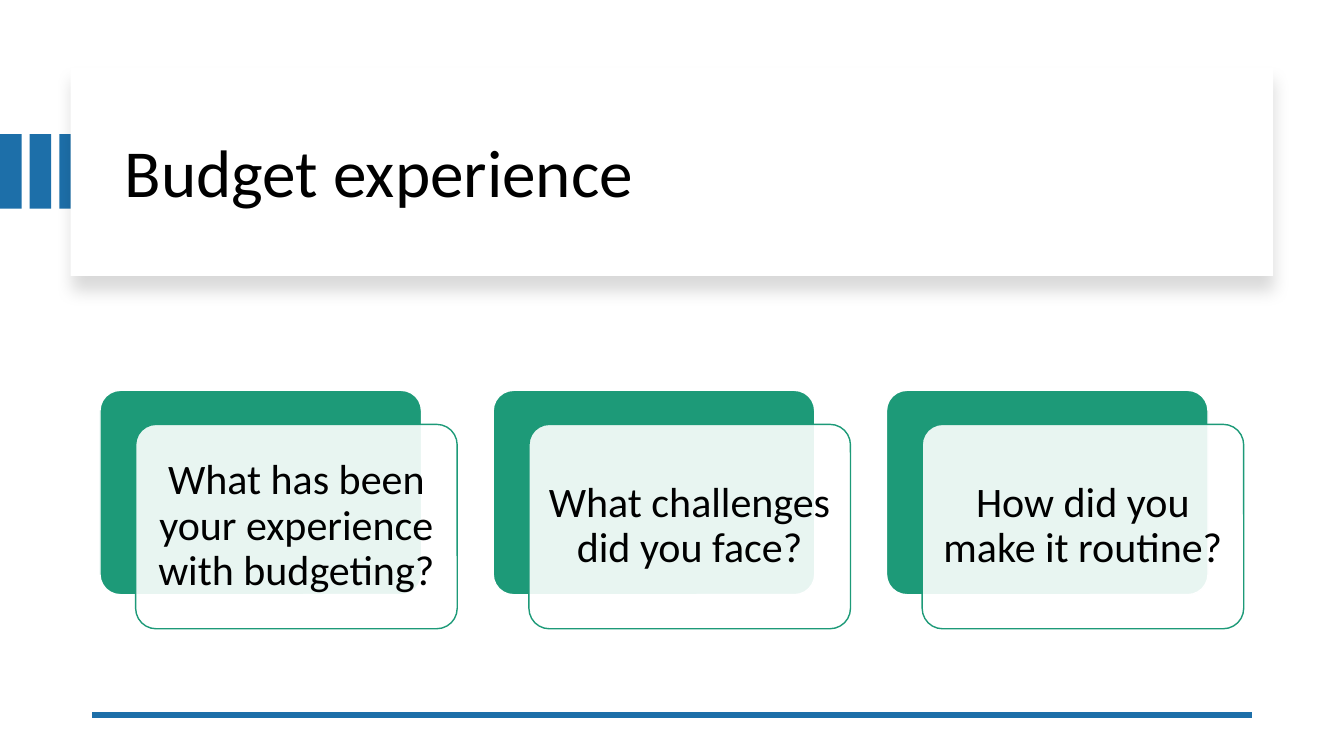
from lxml import etree
from pptx import Presentation
from pptx import util as u
from pptx.dml import color
from pptx.enum import shapes, text
from pptx.oxml import ns

BLUE, GREEN, WHITE, BLACK = "1D6FA9", "1D9A78", "FFFFFF", "000000"
QUESTIONS = [
    "What has been your experience with budgeting?",
    "What challenges did you face?",
    "How did you make it routine?",
]


def rgb(hex_code):
    return color.RGBColor.from_string(hex_code)


def child(parent, tag, **attributes):
    return etree.SubElement(parent, ns.qn(tag), attributes)


def add_block(slide, kind, box, fill, outline=None):
    block = slide.shapes.add_shape(kind, *map(u.Pt, box))
    block.shadow.inherit = False
    block.fill.solid()
    block.fill.fore_color.rgb = rgb(fill)
    if outline:
        block.line.color.rgb = rgb(outline)
        block.line.width = u.Pt(1)
    else:
        block.line.fill.background()
    return block


def write(frame, words, size, align, inset_x, inset_y):
    frame.word_wrap = True
    frame.vertical_anchor = text.MSO_ANCHOR.MIDDLE
    frame.margin_left = frame.margin_right = u.Pt(inset_x)
    frame.margin_top = frame.margin_bottom = u.Pt(inset_y)
    frame.text = words
    paragraph = frame.paragraphs[0]
    paragraph.alignment = align
    paragraph.line_spacing = 0.9
    font = paragraph.runs[0].font
    font.name, font.size = "Calibri", u.Pt(size)
    font.color.rgb = rgb(BLACK)


def draw_bars(slide, left, top, width, height, count=3, pitch=21.2):
    for i in range(count):
        bar = (left + i * pitch, top, width, height)
        add_block(slide, shapes.MSO_SHAPE.RECTANGLE, bar, BLUE)


def draw_title(slide, left, top, width, height):
    panel = add_block(slide, shapes.MSO_SHAPE.RECTANGLE,
                      (left, top, width, height), WHITE)
    effects = panel.element.spPr.find(ns.qn("a:effectLst"))
    shadow = child(effects, "a:outerShdw", blurRad=str(u.Pt(11)),
                   dist=str(u.Pt(10)), dir="5400000", algn="t", rotWithShape="0")
    child(child(shadow, "a:srgbClr", val=BLACK), "a:alpha", val="15000")
    heading = slide.shapes.add_textbox(
        u.Pt(left + 31.7), u.Pt(top + 15.8), u.Pt(width - 57.6), u.Pt(122.4))
    write(heading.text_frame, "Budget experience", 48, text.PP_ALIGN.LEFT, 7.2, 3.6)


def draw_rule(slide, left, y, width):
    rule = slide.shapes.add_connector(
        shapes.MSO_CONNECTOR.STRAIGHT, u.Pt(left + width), u.Pt(y), u.Pt(left), u.Pt(y))
    rule.line.color.rgb = rgb(BLUE)
    rule.line.width = u.Pt(4.5)
    child(rule.element.spPr, "a:effectLst")


def draw_card(slide, question, left, top, width, height):
    rounded = shapes.MSO_SHAPE.ROUNDED_RECTANGLE
    back = add_block(slide, rounded, (left, top, width, height), GREEN, WHITE)
    front = add_block(slide, rounded, (left + 25.5, top + 24.3, width, height),
                      WHITE, GREEN)
    for layer in (back, front):
        layer.adjustments[0] = 0.1
    tint = front.element.spPr.find(ns.qn("a:solidFill"))[0]
    child(tint, "a:alpha", val="90000")
    write(front.text_frame, question, 30, text.PP_ALIGN.CENTER, 8.6, 8.6)


def draw_questions(slide, left, top, card_width, card_height, pitch=280.9):
    for i, question in enumerate(QUESTIONS):
        draw_card(slide, question, left + i * pitch, top, card_width, card_height)


def main():
    deck = Presentation()
    deck.slide_width, deck.slide_height = u.Pt(960), u.Pt(540)
    slide = deck.slides.add_slide(deck.slide_layouts[6])
    draw_bars(slide, 0, 95.8, 15.4, 53.3)
    draw_title(slide, 50.4, 48.2, 859, 149)
    draw_rule(slide, 66, 510.5, 828)
    draw_questions(slide, 71.4, 278.8, 229.7, 146)
    deck.save("out.pptx")


if __name__ == "__main__":
    main()
